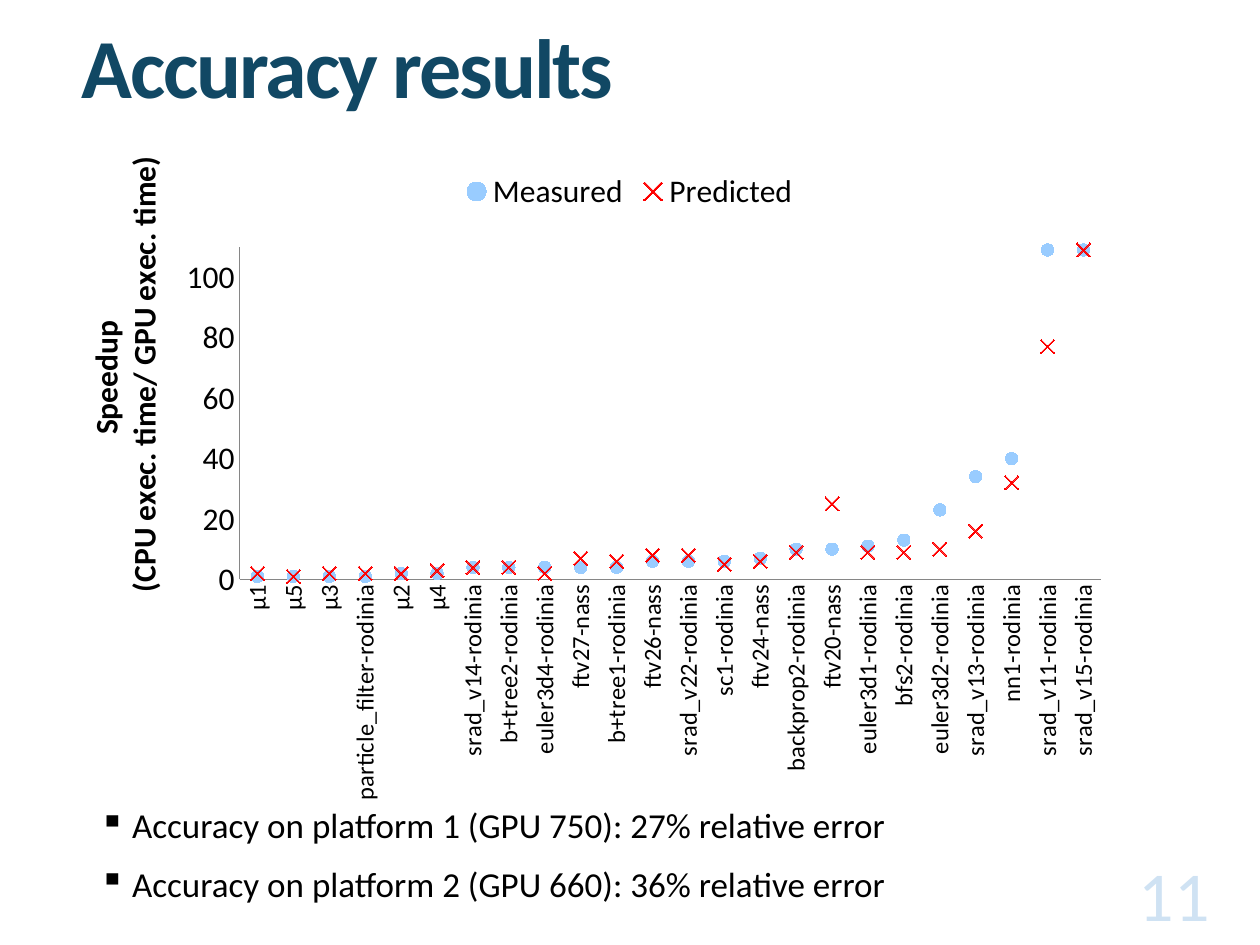
from lxml import etree
from pptx import Presentation
from pptx.chart.data import CategoryChartData
from pptx.dml.color import RGBColor
from pptx.enum.chart import XL_CHART_TYPE, XL_LEGEND_POSITION, XL_MARKER_STYLE, XL_TICK_MARK
from pptx.enum.text import MSO_ANCHOR, PP_ALIGN
from pptx.oxml import parse_xml
from pptx.oxml.ns import nsdecls, qn
from pptx.util import Inches, Pt

LINE_MARKERS = XL_CHART_TYPE.LINE_MARKERS
LEGEND_TOP = XL_LEGEND_POSITION.TOP
CIRCLE, CROSS = XL_MARKER_STYLE.CIRCLE, XL_MARKER_STYLE.X
NO_TICK = XL_TICK_MARK.NONE
MIDDLE = MSO_ANCHOR.MIDDLE
LEFT, RIGHT = PP_ALIGN.LEFT, PP_ALIGN.RIGHT

FONT = "Calibri"
NAVY = RGBColor(0x11, 0x48, 0x64)
BLACK = RGBColor(0, 0, 0)
SKY = RGBColor(0x99, 0xCC, 0xFF)
RED = RGBColor(0xFF, 0, 0)
GREY = RGBColor(0x86, 0x86, 0x86)
PALE_BLUE = RGBColor(0xCF, 0xE2, 0xF3)

# Content
TITLE = "Accuracy results"
AXIS_TITLE = ["Speedup ", "(CPU exec. time/ GPU exec. time)"]
SPEEDUPS = [  # benchmark, measured, predicted
    ("µ1", 1, 2), ("µ5", 1, 1), ("µ3", 1, 2),
    ("particle_filter-rodinia", 1, 2), ("µ2", 2, 2), ("µ4", 2, 3),
    ("srad_v14-rodinia", 4, 4), ("b+tree2-rodinia", 4, 4),
    ("euler3d4-rodinia", 4, 2), ("ftv27-nass", 4, 7),
    ("b+tree1-rodinia", 4, 6), ("ftv26-nass", 6, 8),
    ("srad_v22-rodinia", 6, 8), ("sc1-rodinia", 6, 5),
    ("ftv24-nass", 7, 6), ("backprop2-rodinia", 10, 9),
    ("ftv20-nass", 10, 25), ("euler3d1-rodinia", 11, 9),
    ("bfs2-rodinia", 13, 9), ("euler3d2-rodinia", 23, 10),
    ("srad_v13-rodinia", 34, 16), ("nn1-rodinia", 40, 32),
    ("srad_v11-rodinia", 109, 77), ("srad_v15-rodinia", 109, 109),
]
FINDINGS = [
    "Accuracy on platform 1 (GPU 750): 27% relative error",
    "Accuracy on platform 2 (GPU 660): 36% relative error",
]
PAGE = "11"


def style(font, size, color, bold=False):
    font.name, font.size, font.bold = FONT, Pt(size), bold
    font.color.rgb = color


def manual_layout(inner=False, **fractions):
    """Chart layout placed by fractions of the chart area."""
    target = '<c:layoutTarget val="inner"/>' if inner else ""
    modes = "".join(f'<c:{axis}Mode val="edge"/>' for axis in "xy")
    places = "".join(f'<c:{key} val="{value}"/>' for key, value in fractions.items())
    return parse_xml(f'<c:layout {nsdecls("c")}><c:manualLayout>{target}{modes}{places}'
                     '</c:manualLayout></c:layout>')


def set_layout(parent, layout, before):
    for old in parent.findall(qn("c:layout")):
        parent.remove(old)
    parent.find(qn(before)).addprevious(layout)


prs = Presentation()
prs.slide_width, prs.slide_height = Inches(10), Inches(7.5)
slide = prs.slides.add_slide(prs.slide_layouts[5])

# Title
title = slide.shapes.title
title.left, title.top, title.width, title.height = map(Inches, (0.55, -0.34, 8.84, 1.81))
title.text_frame.text = TITLE
title.text_frame.vertical_anchor = MIDDLE
heading = title.text_frame.paragraphs[0]
heading.alignment, heading.line_spacing = LEFT, 0.9
style(heading.runs[0].font, 48, NAVY, bold=True)
heading.runs[0].font._element.set("spc", "-120")

# Chart
names, measured, predicted = zip(*SPEEDUPS)
data = CategoryChartData(number_format="0")
data.categories = names
data.add_series("Measured", measured)
data.add_series("Predicted", predicted)
chart = slide.shapes.add_chart(
    LINE_MARKERS, *map(Inches, (0.55, 1.16, 9.32, 5.3)), data).chart
style(chart.font, 18, BLACK)
chart.has_title = False
set_layout(chart._chartSpace.chart.plotArea,
           manual_layout(inner=True, x=0.145, y=0.151, w=0.734, h=0.498), "c:lineChart")

for series, marker_style, size, color in zip(
        chart.plots[0].series, (CIRCLE, CROSS), (7, 8), (SKY, RED)):
    series.smooth = False
    series.format.line.fill.background()
    marker = series.marker
    marker.style, marker.size = marker_style, size
    if marker_style == CIRCLE:
        marker.format.fill.solid()
        marker.format.fill.fore_color.rgb = color
    else:
        marker.format.fill.background()
    marker.format.line.color.rgb = color

# Axes
benchmarks, speedup = chart.category_axis, chart.value_axis
for axis, size in ((benchmarks, 14), (speedup, 18)):
    axis.has_major_gridlines = False
    axis.major_tick_mark = axis.minor_tick_mark = NO_TICK
    axis.format.line.color.rgb = GREY
    style(axis.tick_labels.font, size, BLACK)
benchmarks._element.find(qn("c:txPr")).find(qn("a:bodyPr")).set("rot", "-5400000")
speedup.minimum_scale, speedup.maximum_scale, speedup.major_unit = 0, 110, 20
axis_title = speedup.axis_title
axis_title.text_frame.text = "\n".join(AXIS_TITLE)
for line in axis_title.text_frame.paragraphs:
    style(line.runs[0].font, 18, BLACK, bold=True)
axis_title.text_frame._txBody.bodyPr.set("rot", "-5400000")
set_layout(axis_title._element, manual_layout(x=0.01, y=0.01), "c:overlay")

# Legend
chart.has_legend = True
legend = chart.legend
legend.position, legend.include_in_layout = LEGEND_TOP, False
style(legend.font, 18, BLACK)
set_layout(legend._element, manual_layout(x=0.33, y=0.03), "c:overlay")

# Findings
findings = slide.shapes.add_textbox(*map(Inches, (0.69, 6.38, 8.7, 1.12))).text_frame
findings.word_wrap = True
findings.text = "\n".join(FINDINGS)
for finding in findings.paragraphs:
    finding.line_spacing, finding.space_before = 0.85, Pt(13)
    style(finding.runs[0].font, 20, BLACK)
    properties = finding._p.get_or_add_pPr()
    properties.set("marL", str(Inches(0.26)))
    properties.set("indent", str(Inches(-0.26)))
    etree.SubElement(properties, qn("a:buChar")).set("char", "▪")

# Page number
page = slide.shapes.add_textbox(*map(Inches, (8.7, 6.72, 1, 0.75))).text_frame
page.word_wrap = True
page.vertical_anchor = MIDDLE
page.text = PAGE
page.paragraphs[0].alignment = RIGHT
style(page.paragraphs[0].runs[0].font, 40, PALE_BLUE)

prs.save("out.pptx")
